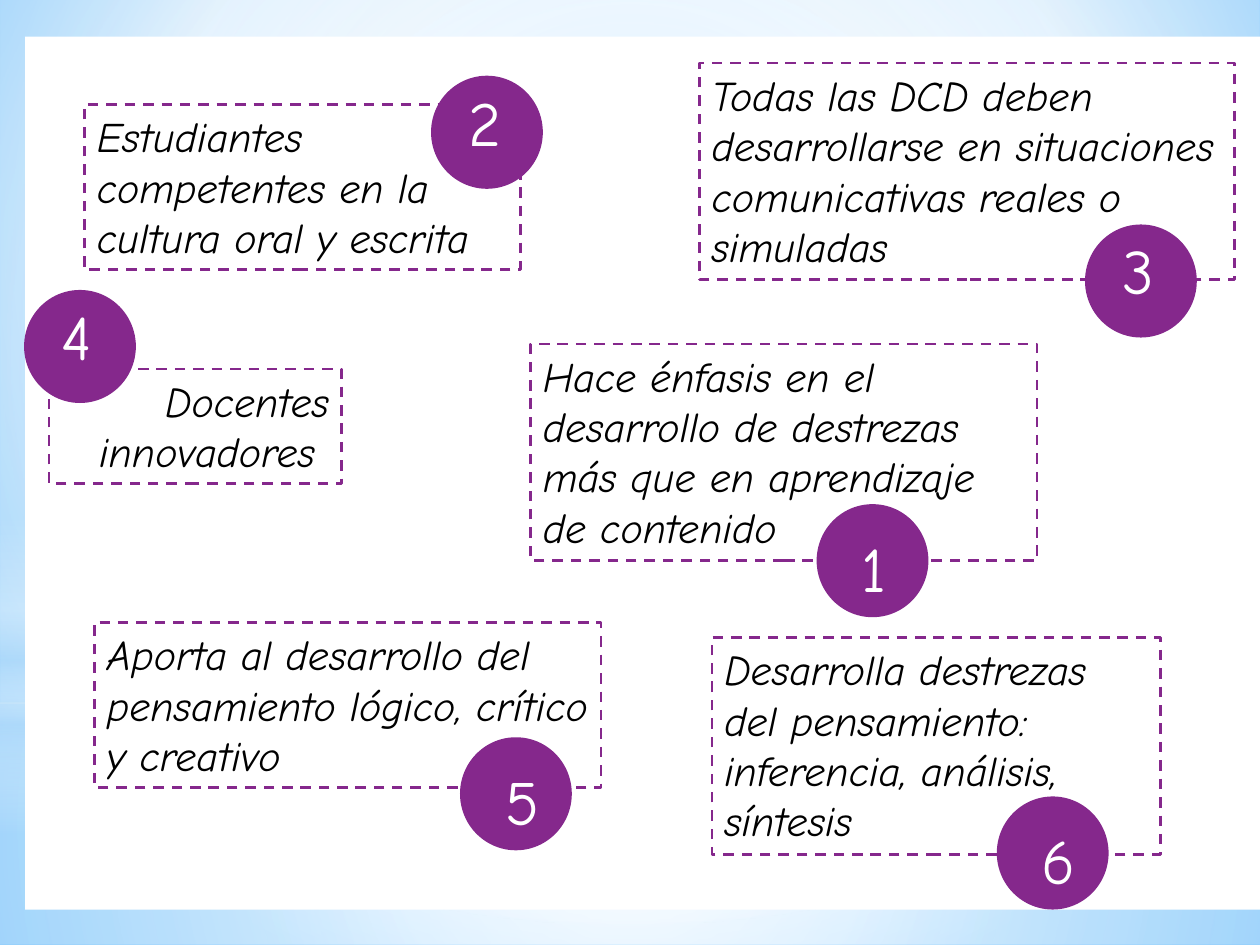
from lxml import etree
from pptx import Presentation
from pptx.dml.color import RGBColor
from pptx.enum.dml import MSO_LINE
from pptx.enum.shapes import MSO_SHAPE
from pptx.enum.text import MSO_ANCHOR, MSO_AUTO_SIZE, PP_ALIGN
from pptx.oxml.ns import qn
from pptx.util import Inches, Pt

RECT, OVAL = MSO_SHAPE.RECTANGLE, MSO_SHAPE.OVAL
DASH = MSO_LINE.DASH
TOP = MSO_ANCHOR.TOP
GROW = MSO_AUTO_SIZE.SHAPE_TO_FIT_TEXT
LEFT, RIGHT = PP_ALIGN.LEFT, PP_ALIGN.RIGHT
FONT = "Comic Neue"
COLORS = {"purple": "85288C", "white": "FFFFFF", "black": "000000",
          "sky": "9ED5FF", "blue": "5BB9FF", "pale": "B4DCFA"}
CENTER = (50, 50, 50, 50)
BADGE_W, BADGE_H = 0.87, 0.88
HIGH, LOW = (0.19, 0), (0.25, 0.14)

GLOWS = [
    (RECT, (0, 5.58, 10, 1.92), CENTER,
     [(0, "white", 91), (37, "white", 76), (100, "pale", 79)]),
    (RECT, (0, 0, 10, 5.58), CENTER,
     [(0, "white", 89), (48, "white", 62), (100, "pale", 79)]),
    (RECT, (0, 4.12, 10, 2.5), None,
     [(0, "white", 0), (29, "white", 30), (45, "pale", 40),
      (55, "white", 26), (65, "pale", 60), (100, "white", 0)]),
    (OVAL, (0, 1.75, 10, 5.58), CENTER,
     [(0, "white", 100), (56, "white", 0)]),
]

CARDS = [
    ("1", "Hace énfasis en el desarrollo de destrezas más que en aprendizaje de contenido",
     (4.21, 2.73, 4.02, 1.72), (6.49, 4.01), LOW, LEFT),
    ("2", "Estudiantes competentes en la cultura oral y escrita",
     (0.67, 0.83, 3.46, 1.31), (3.43, 0.61), HIGH, LEFT),
    ("3", "Todas las DCD deben desarrollarse en situaciones comunicativas reales o simuladas",
     (5.55, 0.5, 4.25, 1.72), (8.62, 1.79), HIGH, LEFT),
    ("4", "Docentes innovadores ",
     (0.39, 2.93, 2.32, 0.91), (0.2, 2.31), HIGH, RIGHT),
    ("5", "Aporta al desarrollo del pensamiento lógico, crítico y creativo",
     (0.75, 4.94, 4.02, 1.31), (3.66, 5.86), LOW, LEFT),
    ("6", "Desarrolla destrezas del pensamiento: inferencia, análisis, síntesis",
     (5.65, 5.06, 3.56, 1.72), (7.92, 6.33), LOW, LEFT),
]


def rgb(name):
    """Return the named colour."""
    return RGBColor.from_string(COLORS[name])


def set_gradient(fill, element, stops, focus=None):
    """Give a fill stops of (position, colour, opacity), radial when focus is set."""
    fill.gradient()
    grad = element.find(".//" + qn("a:gradFill"))
    for child in list(grad):
        grad.remove(child)
    gs_list = etree.SubElement(grad, qn("a:gsLst"))
    for pos, color, opacity in stops:
        gs = etree.SubElement(gs_list, qn("a:gs"), pos=str(pos * 1000))
        clr = etree.SubElement(gs, qn("a:srgbClr"), val=COLORS[color])
        etree.SubElement(clr, qn("a:alpha"), val=str(opacity * 1000))
    if focus:
        path = etree.SubElement(grad, qn("a:path"), path="circle")
        sides = {side: str(v * 1000) for side, v in zip("ltrb", focus)}
        etree.SubElement(path, qn("a:fillToRect"), **sides)
    else:
        etree.SubElement(grad, qn("a:lin"), ang="5400000", scaled="0")


def add_shape(s, kind, box, fill=None, line=None, width=1.25):
    """Add a flat preset shape in a box of inches."""
    sp = s.shapes.add_shape(kind, *map(Inches, box))
    sp.shadow.inherit = False
    if fill:
        sp.fill.solid()
        sp.fill.fore_color.rgb = rgb(fill)
    else:
        sp.fill.background()
    if line:
        sp.line.color.rgb = rgb(line)
        sp.line.width = Pt(width)
    else:
        sp.line.fill.background()
    return sp


def write(sp, text, size=24, color="black", italic=False, align=LEFT):
    """Write one formatted paragraph into a shape."""
    tf = sp.text_frame
    tf.word_wrap = True
    tf.auto_size = GROW
    tf.vertical_anchor = TOP
    p = tf.paragraphs[0]
    p.alignment = align
    r = p.add_run()
    r.text = text
    r.font.name = FONT
    r.font.size = Pt(size)
    r.font.italic = italic
    r.font.color.rgb = rgb(color)


def add_backdrop(s):
    """Paint the sky gradient, its glows and the white panel."""
    set_gradient(s.background.fill, s.element,
                 [(0, "sky", 100), (60, "white", 100), (100, "blue", 100)],
                 (20, 10, 20, 60))
    for kind, box, focus, stops in GLOWS:
        sp = add_shape(s, kind, box)
        set_gradient(sp.fill, sp.element, stops, focus)
    add_shape(s, RECT, (0.2, 0.29, 9.8, 6.93), fill="white")


def add_badge(s, number, corner, offset):
    """Add a numbered disc with its top left at the corner."""
    x, y = corner
    add_shape(s, OVAL, (x, y, BADGE_W, BADGE_H), fill="purple", line="purple")
    box = (x + offset[0], y + offset[1], 0.39, 0.71)
    write(s.shapes.add_textbox(*map(Inches, box)), number, size=36, color="white")


def add_card(s, text, box, align):
    """Add a dashed card with an italic statement."""
    sp = add_shape(s, RECT, box, line="purple", width=1.5)
    sp.line.dash_style = DASH
    write(sp, text, italic=True, align=align)


def main():
    """Build and save the slide."""
    prs = Presentation()
    prs.slide_width, prs.slide_height = Inches(10), Inches(7.5)
    s = prs.slides.add_slide(prs.slide_layouts[6])
    add_backdrop(s)
    for number, text, box, corner, offset, align in CARDS:
        add_card(s, text, box, align)
        add_badge(s, number, corner, offset)
    prs.save("out.pptx")


if __name__ == "__main__":
    main()
